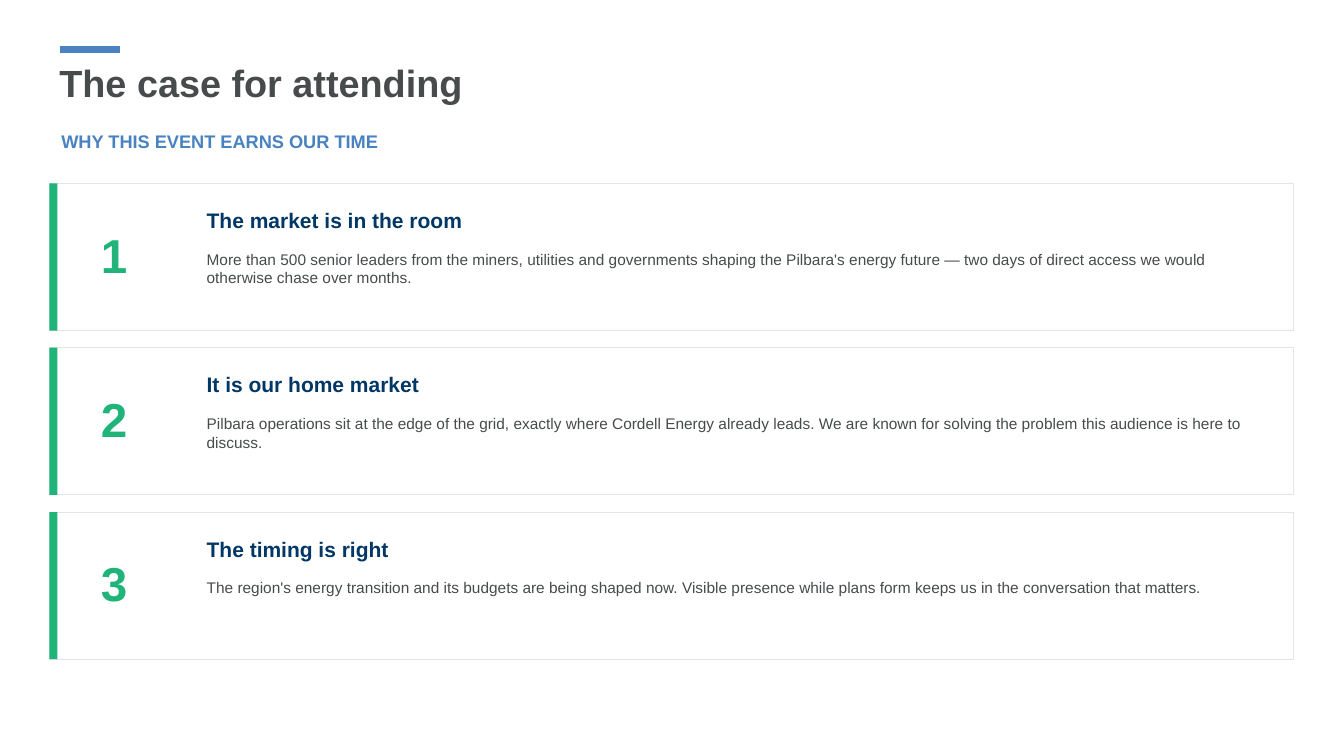
from pptx import Presentation
from pptx.dml.color import RGBColor
from pptx.enum.shapes import MSO_CONNECTOR, MSO_SHAPE
from pptx.enum.text import MSO_ANCHOR, MSO_AUTO_SIZE
from pptx.oxml.ns import qn
from pptx.util import Emu, Pt

PX = 9144  # 100 px to the inch
BLANK_LAYOUT = 6

RECTANGLE = MSO_SHAPE.RECTANGLE
STRAIGHT = MSO_CONNECTOR.STRAIGHT
TOP, MIDDLE = MSO_ANCHOR.TOP, MSO_ANCHOR.MIDDLE
FIXED, GROW = MSO_AUTO_SIZE.NONE, MSO_AUTO_SIZE.SHAPE_TO_FIT_TEXT

WHITE = RGBColor(0xFF, 0xFF, 0xFF)
GREY = RGBColor(0x47, 0x4B, 0x4C)
PALE_GREY = RGBColor(0xE4, 0xE4, 0xE3)
ACCENT_BLUE = RGBColor(0x4A, 0x82, 0xC1)
SUBTITLE_BLUE = RGBColor(0x49, 0x82, 0xC0)
NAVY = RGBColor(0x00, 0x37, 0x64)
GREEN = RGBColor(0x20, 0xB4, 0x7A)

CARD_LEFT, CARD_TOP = 49, 182
CARD_WIDTH, CARD_HEIGHT = 1234, 146
CARD_STEP = 163

REASONS = [
    ("The market is in the room",
     "More than 500 senior leaders from the miners, utilities and governments "
     "shaping the Pilbara's energy future — two days of direct access we would "
     "otherwise chase over months."),
    ("It is our home market",
     "Pilbara operations sit at the edge of the grid, exactly where Cordell "
     "Energy already leads. We are known for solving the problem this audience "
     "is here to discuss."),
    ("The timing is right",
     "The region's energy transition and its budgets are being shaped now. "
     "Visible presence while plans form keeps us in the conversation that "
     "matters."),
]


def px(*lengths):
    return [Emu(length * PX) for length in lengths]


def set_all(target, values):
    for name, value in values.items():
        setattr(target, name, value)


def add_text(page, place, text, size, color, bold=True, anchor=TOP,
             insets=(5, 2), auto_size=GROW, line_spacing=None):
    """Add a one-paragraph text box; insets are (horizontal, vertical)."""
    frame = page.shapes.add_textbox(*px(*place)).text_frame
    across, down = px(*insets)
    set_all(frame, {
        "word_wrap": True, "auto_size": auto_size, "vertical_anchor": anchor,
        "margin_left": across, "margin_right": across,
        "margin_top": down, "margin_bottom": down,
    })
    para = frame.paragraphs[0]
    para.line_spacing = line_spacing
    span = para.add_run()
    span.text = text
    set_all(span.font, {"name": "Arial", "size": Pt(size), "bold": bold})
    span.font.color.rgb = color


def add_heading(page, place, text, size, color, anchor):
    add_text(page, place, text, size, color, anchor=anchor,
             insets=(10, 5), auto_size=FIXED, line_spacing=1.1)


def add_rectangle(page, place, fill, outline=None):
    box = page.shapes.add_shape(RECTANGLE, *px(*place))
    box.shadow.inherit = False
    box.fill.solid()
    box.fill.fore_color.rgb = fill
    if outline is None:
        box.line.fill.background()
    else:
        box.line.color.rgb = outline
        box.line.width = Pt(0.75)


def add_accent_line(page, ends, color, width):
    line = page.shapes.add_connector(STRAIGHT, *px(*ends))
    line.line.color.rgb = color
    line.line.width = Pt(width)
    properties = line._element.spPr
    properties.append(properties.makeelement(qn("a:effectLst"), {}))


def add_reason_card(page, number, top, title, detail):
    add_rectangle(page, (CARD_LEFT, top, CARD_WIDTH, CARD_HEIGHT),
                  WHITE, PALE_GREY)
    add_rectangle(page, (CARD_LEFT, top, 8, CARD_HEIGHT), GREEN)
    add_text(page, (95, top + 20, 90, 100), str(number), 34, GREEN,
             anchor=MIDDLE)
    add_text(page, (200, top + 22, 1060, 40), title, 15, NAVY)
    add_text(page, (200, top + 64, 1060, 74), detail, 11, GREY, bold=False)


def main():
    deck = Presentation()
    deck.slide_width, deck.slide_height = px(1333, 750)
    page = deck.slides.add_slide(deck.slide_layouts[BLANK_LAYOUT])

    add_accent_line(page, (60, 49, 119, 49), ACCENT_BLUE, 4.5)
    add_heading(page, (49, 38, 1055, 84), "The case for attending",
                27, GREY, MIDDLE)
    add_heading(page, (51, 122, 1055, 44), "WHY THIS EVENT EARNS OUR TIME",
                13, SUBTITLE_BLUE, TOP)
    for index, (title, detail) in enumerate(REASONS):
        add_reason_card(page, index + 1, CARD_TOP + index * CARD_STEP,
                        title, detail)

    deck.save("out.pptx")


if __name__ == "__main__":
    main()
